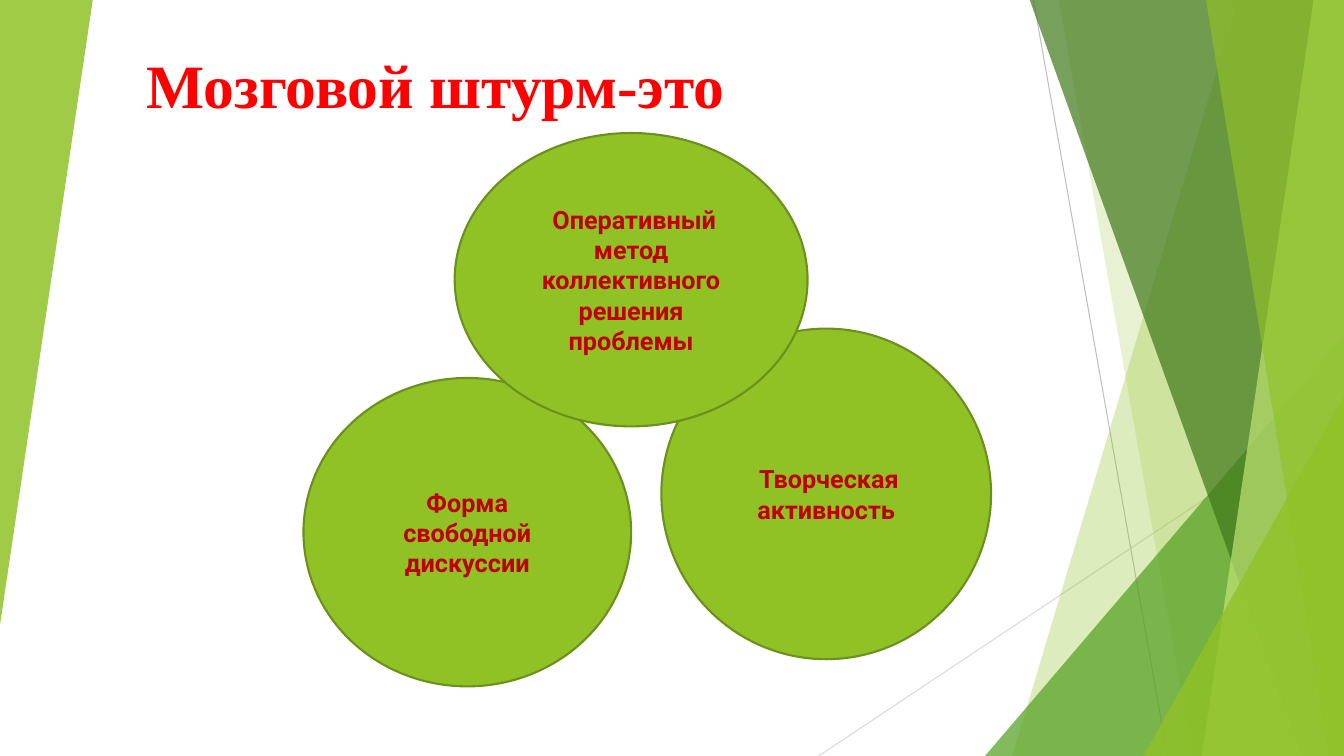
from dataclasses import dataclass

from lxml import etree
from pptx import Presentation
from pptx.dml.color import RGBColor
from pptx.enum.shapes import MSO_CONNECTOR, MSO_SHAPE
from pptx.enum.text import MSO_ANCHOR, MSO_AUTO_SIZE, PP_ALIGN
from pptx.oxml.ns import qn
from pptx.shapes.autoshape import Shape
from pptx.slide import Slide
from pptx.util import Inches, Pt

STRAIGHT = MSO_CONNECTOR.STRAIGHT
TRIANGLE = MSO_SHAPE.ISOSCELES_TRIANGLE
OVAL = MSO_SHAPE.OVAL
TOP, MIDDLE = MSO_ANCHOR.TOP, MSO_ANCHOR.MIDDLE
LEFT, CENTER = PP_ALIGN.LEFT, PP_ALIGN.CENTER
NO_AUTOFIT = MSO_AUTO_SIZE.NONE

GREEN = RGBColor(0x90, 0xC2, 0x26)
MID_GREEN = RGBColor(0x54, 0xA0, 0x21)
DARK_GREEN = RGBColor(0x3F, 0x78, 0x19)
PALE_GREEN = RGBColor(0xC0, 0xE4, 0x74)
OUTLINE_GREEN = RGBColor(0x6B, 0x90, 0x1C)
GRAY = RGBColor(0xBF, 0xBF, 0xBF)
LIGHT_GRAY = RGBColor(0xD9, 0xD9, 0xD9)
RED = RGBColor(0xFF, 0x00, 0x00)
DARK_RED = RGBColor(0xC0, 0x00, 0x00)
BLACK = RGBColor(0x00, 0x00, 0x00)

WIDTH, HEIGHT = 13.33, 7.5
BAND_TOP = -0.01
TITLE_FONT = {"name": "Times New Roman", "size": Pt(44), "bold": True}
SPACE_FONT = {"name": "Roboto", "size": Pt(18), "bold": False}
CIRCLE_FONT = {"name": "Roboto", "size": Pt(18), "bold": True}


@dataclass(frozen=True)
class Ray:
    start: tuple[float, float]
    end: tuple[float, float]
    color: RGBColor


@dataclass(frozen=True)
class Band:
    top_left: float
    bottom_left: float
    color: RGBColor
    opacity: int


@dataclass(frozen=True)
class Wedge:
    box: tuple[float, float, float, float]
    color: RGBColor
    opacity: int
    rotation: int = 0


@dataclass(frozen=True)
class Circle:
    box: tuple[float, float, float, float]
    text: str


RAYS = [
    Ray((10.25, 0), (11.58, HEIGHT), GRAY),
    Ray((WIDTH, 4.03), (8.12, HEIGHT), LIGHT_GRAY),
]
FACETS = [
    Band(12.28, 10.04, GREEN, 30),
    Band(10.5, 11.83, GREEN, 20),
    Wedge((9.77, 3.33, 3.56, 4.17), MID_GREEN, 72),
    Band(10.21, 12.91, DARK_GREEN, 70),
    Band(13.03, 11.92, PALE_GREEN, 70),
    Band(11.96, 13.18, GREEN, 65),
    Wedge((11.34, 3.93, 1.99, 3.57), GREEN, 80),
    Wedge((0, 0, 0.92, 6.2), GREEN, 85, 180),
]
CIRCLES = [
    Circle((3.01, 3.75, 3.25, 3.06), "Форма свободной дискуссии"),
    Circle((6.56, 3.26, 3.27, 3.28), " Творческая активность"),
    Circle((4.51, 1.32, 3.5, 2.91), " Оперативный метод коллективного решения проблемы"),
]


def apply(target: object, values: dict) -> None:
    for name, value in values.items():
        setattr(target, name, value)


def add_run(paragraph, text: str, font: dict, color: RGBColor) -> None:
    run = paragraph.add_run()
    run.text = text
    apply(run.font, font)
    run.font.color.rgb = color


def draw_ray(slide: Slide, ray: Ray) -> None:
    points = [Inches(value) for value in (*ray.start, *ray.end)]
    connector = slide.shapes.add_connector(STRAIGHT, *points)
    connector.line.color.rgb = ray.color
    connector.line.width = Pt(0.75)
    etree.SubElement(connector._element.spPr, qn("a:effectLst"))


def add_facet(slide: Slide, facet: Band | Wedge) -> Shape:
    if isinstance(facet, Wedge):
        shape = slide.shapes.add_shape(TRIANGLE, *map(Inches, facet.box))
        shape.adjustments[0] = 1
        shape.rotation = facet.rotation
        return shape
    builder = slide.shapes.build_freeform(Inches(facet.top_left), Inches(BAND_TOP))
    corners = [(WIDTH, BAND_TOP), (WIDTH, HEIGHT), (facet.bottom_left, HEIGHT)]
    builder.add_line_segments([(Inches(x), Inches(y)) for x, y in corners])
    return builder.convert_to_shape()


def draw_facet(slide: Slide, facet: Band | Wedge) -> None:
    shape = add_facet(slide, facet)
    shape.shadow.inherit = False
    shape.line.fill.background()
    shape.fill.solid()
    shape.fill.fore_color.rgb = facet.color
    color = shape._element.spPr.find(f"{qn('a:solidFill')}/{qn('a:srgbClr')}")
    etree.SubElement(color, qn("a:alpha"), val=str(facet.opacity * 1000))


def draw_circle(slide: Slide, circle: Circle) -> None:
    shape = slide.shapes.add_shape(OVAL, *map(Inches, circle.box))
    shape.shadow.inherit = False
    shape.fill.solid()
    shape.fill.fore_color.rgb = GREEN
    shape.line.color.rgb = OUTLINE_GREEN
    shape.line.width = Pt(1.5)
    apply(shape.text_frame, {"word_wrap": True, "vertical_anchor": MIDDLE})
    paragraph = shape.text_frame.paragraphs[0]
    paragraph.alignment = CENTER
    add_run(paragraph, circle.text, CIRCLE_FONT, DARK_RED)


def write_title(slide: Slide) -> None:
    title = slide.shapes.title
    apply(title, {"left": Inches(1.29), "top": Inches(0.37),
                  "width": Inches(6.07), "height": Inches(1.14)})
    apply(title.text_frame, {"auto_size": NO_AUTOFIT, "word_wrap": False,
                             "vertical_anchor": TOP, "margin_top": Inches(0.1)})
    paragraph = title.text_frame.paragraphs[0]
    paragraph.alignment = LEFT
    add_run(paragraph, " ", SPACE_FONT, BLACK)
    add_run(paragraph, "Мозговой штурм-это", TITLE_FONT, RED)


def main() -> None:
    presentation = Presentation()
    presentation.slide_width = Inches(WIDTH)
    presentation.slide_height = Inches(HEIGHT)
    title_only = presentation.slide_layouts[5]
    slide = presentation.slides.add_slide(title_only)
    for ray in RAYS:
        draw_ray(slide, ray)
    for facet in FACETS:
        draw_facet(slide, facet)
    write_title(slide)
    for circle in CIRCLES:
        draw_circle(slide, circle)
    presentation.save("out.pptx")


if __name__ == "__main__":
    main()
